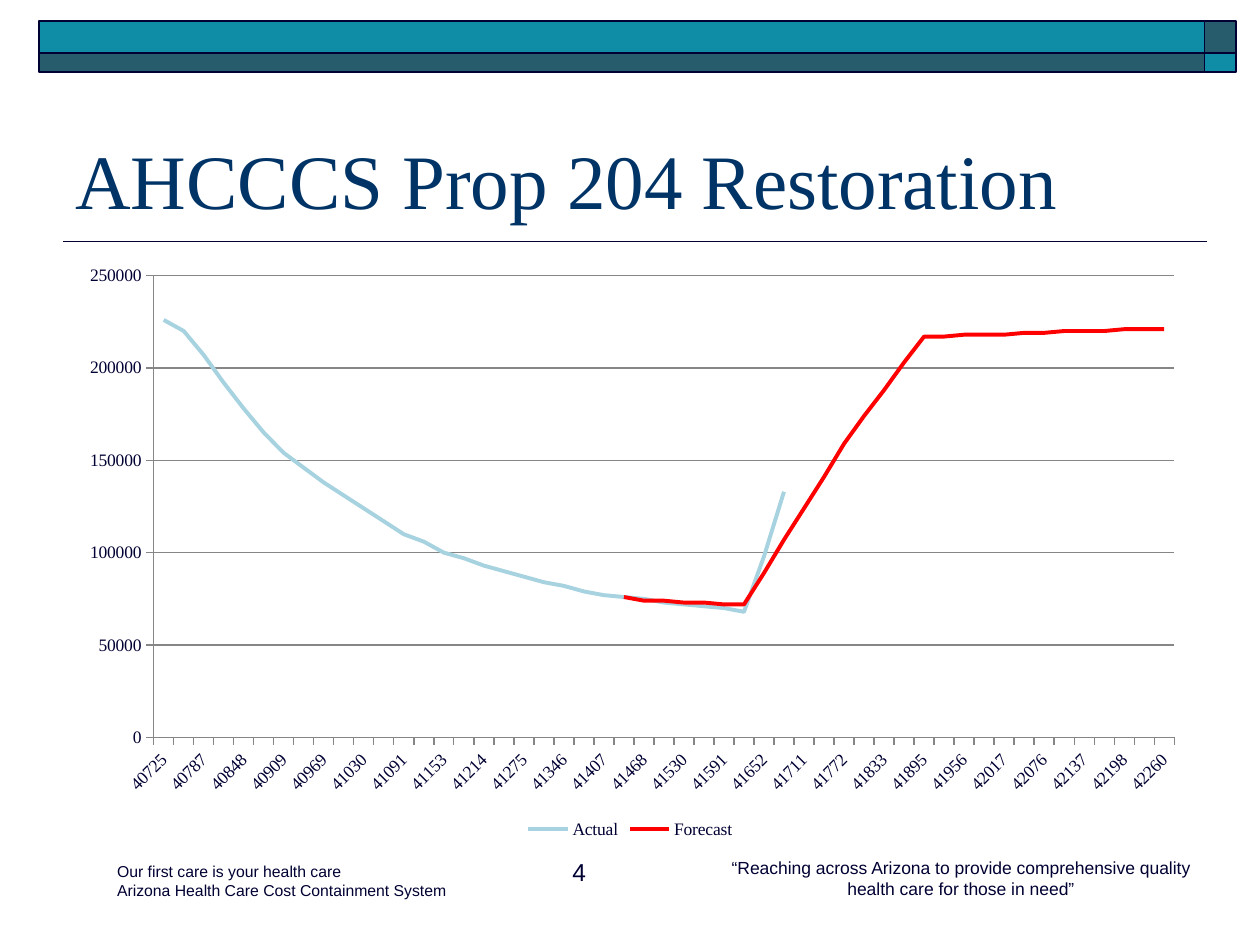
import pptx
import pptx.chart.data
import pptx.dml.color
import pptx.enum.chart
import pptx.enum.shapes
import pptx.enum.text
import pptx.oxml
import pptx.oxml.ns
import pptx.util
from pptx.util import Pt

COLORS = {
    "ink": "000033",
    "title": "003366",
    "teal": "108DA6",
    "slate": "275C6D",
    "grid": "868686",
    "actual": "A7D2DF",
    "forecast": "FF0000",
}

# Month starts as day serials
MONTHS = """
40725 40756 40787 40817 40848 40878 40909 40940 40969 41000 41030 41061 41091
41122 41153 41194 41214 41244 41275 41318 41346 41377 41407 41438 41468 41499
41530 41560 41591 41621 41652 41683 41711 41742 41772 41803 41833 41864 41895
41925 41956 41986 42017 42048 42076 42107 42137 42168 42198 42229 42260
""".split()

# Members in thousands
ACTUAL = [226, 220, 207, 192, 178, 165, 154, 146, 138, 131, 124, 117, 110, 106,
          100, 97, 93, 90, 87, 84, 82, 79, 77, 76, 75, 73, 72, 71, 70, 68, 98, 133]
FORECAST = [76, 74, 74, 73, 73, 72, 72, 89, 107, 124, 141, 159, 174, 188, 203,
            217, 217, 218, 218, 218, 219, 219, 220, 220, 220, 221, 221, 221]


def rgb(name):
    return pptx.dml.color.RGBColor.from_string(COLORS[name])


def style_font(font, name, size, color):
    font.name = name
    font.size = Pt(size)
    font.color.rgb = rgb(color)


def add_bar(page, left, top, width, height, color):
    bar = page.shapes.add_shape(pptx.enum.shapes.MSO_SHAPE.RECTANGLE,
                                Pt(left), Pt(top), Pt(width), Pt(height))
    bar.shadow.inherit = False
    bar.fill.solid()
    bar.fill.fore_color.rgb = rgb(color)
    bar.line.color.rgb = rgb("ink")
    bar.line.width = Pt(1)


def add_rule(page, left, right, top):
    rule = page.shapes.add_connector(pptx.enum.shapes.MSO_CONNECTOR.STRAIGHT,
                                     Pt(left), Pt(top), Pt(right), Pt(top))
    rule.line.color.rgb = rgb("ink")
    rule.line.width = Pt(1)
    properties = rule._element.spPr
    properties.append(pptx.oxml.parse_xml(
        "<a:effectLst %s/>" % pptx.oxml.ns.nsdecls("a")))


def add_text(page, text, place, size, align="LEFT", name="Arial", color="ink",
             anchor="TOP"):
    box = page.shapes.add_textbox(*(Pt(length) for length in place))
    frame = box.text_frame
    frame.word_wrap = True
    frame.vertical_anchor = getattr(pptx.enum.text.MSO_ANCHOR, anchor)
    frame.text = text
    for para in frame.paragraphs:
        para.alignment = getattr(pptx.enum.text.PP_ALIGN, align)
        for span in para.runs:
            style_font(span.font, name, size, color)


def set_plot_layout(chart, **shares):
    """Fix the inner plot area, in shares of the chart's size."""
    parts = "".join('<c:%s val="%s"/>' % item for item in shares.items())
    layout = pptx.oxml.parse_xml(
        '<c:layout %s><c:manualLayout><c:layoutTarget val="inner"/>'
        '<c:xMode val="edge"/><c:yMode val="edge"/>%s'
        '</c:manualLayout></c:layout>' % (pptx.oxml.ns.nsdecls("c"), parts))
    plot_area = chart._chartSpace.chart.plotArea
    for old in plot_area.findall(pptx.oxml.ns.qn("c:layout")):
        plot_area.remove(old)
    plot_area.insert(0, layout)


def style_axes(chart):
    for axis in (chart.category_axis, chart.value_axis):
        axis.major_tick_mark = pptx.enum.chart.XL_TICK_MARK.OUTSIDE
        axis.format.line.color.rgb = rgb("grid")
        axis.format.line.width = Pt(0.75)
    chart.value_axis.minimum_scale = 0
    chart.value_axis.maximum_scale = 250000
    chart.value_axis.major_unit = 50000
    chart.value_axis.has_major_gridlines = True
    gridline = chart.value_axis.major_gridlines.format.line
    gridline.color.rgb = rgb("grid")
    gridline.width = Pt(0.75)

    # Slanted labels on every second month
    months = chart.category_axis
    months.tick_labels.font.size = Pt(10)
    months._element.txPr.bodyPr.set("rot", "-2700000")
    skip = pptx.oxml.parse_xml(
        '<c:tickLblSkip %s val="2"/>' % pptx.oxml.ns.nsdecls("c"))
    months._element.find(pptx.oxml.ns.qn("c:noMultiLvlLbl")).addprevious(skip)


def add_enrollment_chart(page):
    data = pptx.chart.data.CategoryChartData(number_format="General")
    data.categories = MONTHS
    actual = [value * 1000 for value in ACTUAL]
    forecast = [value * 1000 for value in FORECAST]
    data.add_series("Actual", actual + [None] * (len(MONTHS) - len(actual)))
    data.add_series("Forecast", [None] * (len(MONTHS) - len(forecast)) + forecast)
    chart = page.shapes.add_chart(pptx.enum.chart.XL_CHART_TYPE.LINE,
                                  Pt(36), Pt(144), Pt(648), Pt(338.4), data).chart
    chart.has_title = False
    style_font(chart.font, "Times New Roman", 10, "ink")
    chart.has_legend = True
    chart.legend.position = pptx.enum.chart.XL_LEGEND_POSITION.BOTTOM
    chart.legend.include_in_layout = False
    chart.plots[0].vary_by_categories = False
    for series, color in zip(chart.plots[0].series, ("actual", "forecast")):
        series.smooth = False
        series.marker.style = pptx.enum.chart.XL_MARKER_STYLE.NONE
        series.format.line.color.rgb = rgb(color)
        series.format.line.width = Pt(2.25)
    style_axes(chart)
    set_plot_layout(chart, x=0.08, y=0.04, w=0.9, h=0.78)


def main():
    deck = pptx.Presentation()
    deck.slide_width, deck.slide_height = Pt(720), Pt(540)
    page = deck.slides.add_slide(deck.slide_layouts[6])

    # Banner: two rows with the colours swapped at the right end
    for top, height, wide, end in ((12.2, 18, "teal", "slate"),
                                   (30.2, 10.8, "slate", "teal")):
        add_bar(page, 22.3, top, 666, height, wide)
        add_bar(page, 688.3, top, 18, height, end)

    # Title and rule
    add_text(page, "AHCCCS Prop 204 Restoration", (36, 42, 648, 90), 44,
             name="Times New Roman", color="title", anchor="BOTTOM")
    add_rule(page, 36, 690, 138)

    add_enrollment_chart(page)

    # Footer
    add_text(page, "Our first care is your health care\n"
             "Arizona Health Care Cost Containment System",
             (59.8, 489, 203, 29), 9)
    add_text(page, "4", (264, 486, 78, 37.5), 14, "RIGHT")
    add_text(page, "“Reaching across Arizona to provide comprehensive quality "
             "health care for those in need”", (402, 486, 294, 31), 10, "CENTER")

    deck.save("out.pptx")


if __name__ == "__main__":
    main()
